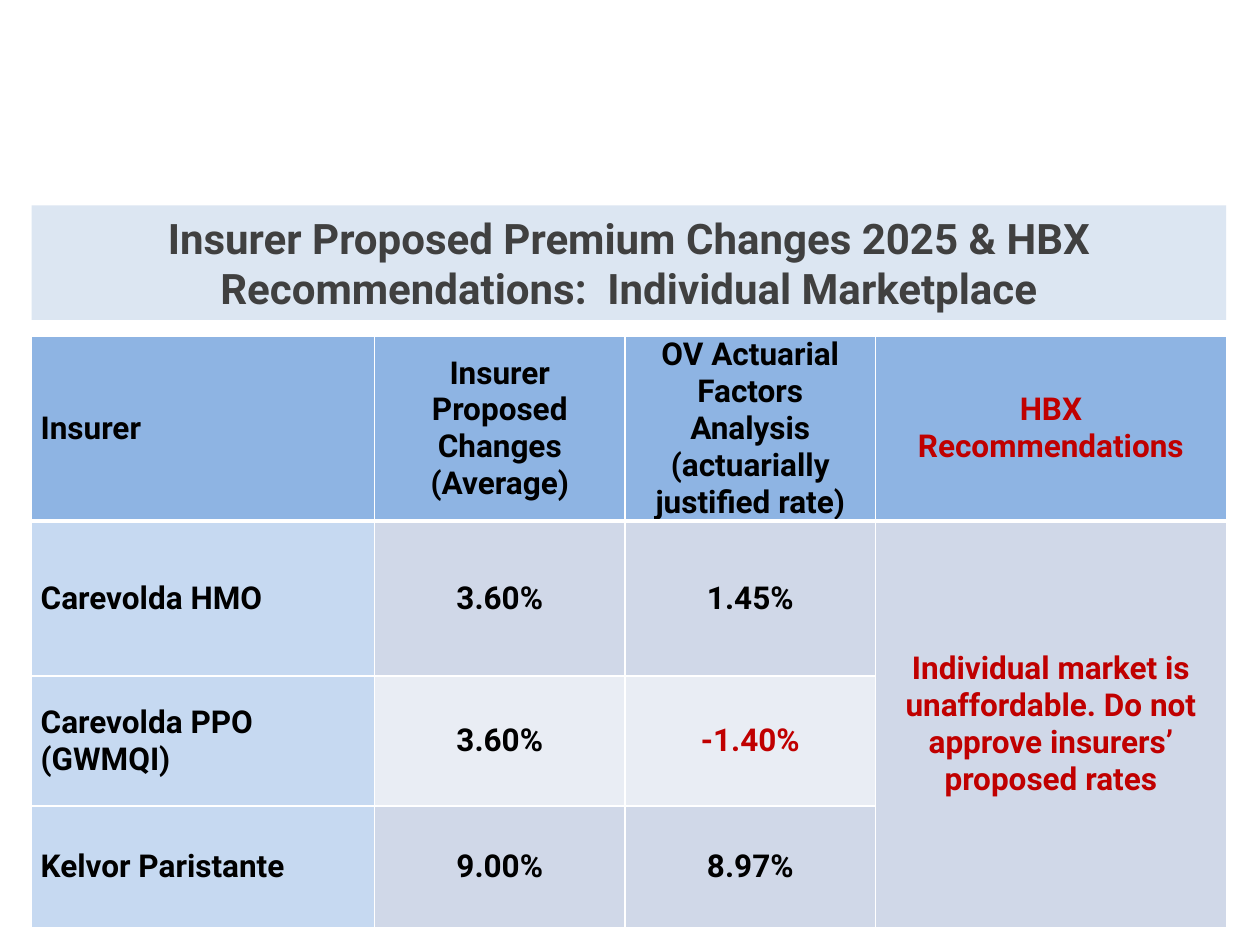
from dataclasses import dataclass

from lxml import etree
from pptx import Presentation
from pptx.dml.color import RGBColor
from pptx.enum.shapes import MSO_SHAPE
from pptx.enum.text import MSO_ANCHOR, PP_ALIGN
from pptx.oxml.ns import qn
from pptx.util import Cm, Pt

RECTANGLE = MSO_SHAPE.RECTANGLE
MIDDLE = MSO_ANCHOR.MIDDLE
LEFT, CENTER = PP_ALIGN.LEFT, PP_ALIGN.CENTER

BLACK = RGBColor(0x00, 0x00, 0x00)
WHITE = RGBColor(0xFF, 0xFF, 0xFF)
RED = RGBColor(0xC0, 0x00, 0x00)
TITLE_GRAY = RGBColor(0x40, 0x40, 0x40)
TITLE_FILL = RGBColor(0xDC, 0xE6, 0xF2)
HEADER_FILL = RGBColor(0x8E, 0xB4, 0xE3)
INSURER_FILL = RGBColor(0xC6, 0xD9, 0xF1)
BAND_DARK = RGBColor(0xD0, 0xD8, 0xE8)
BAND_LIGHT = RGBColor(0xE9, 0xED, 0xF4)

FONT = "Roboto"
MARGIN, CONTENT_WIDTH = Cm(0.64), Cm(24.08)
COLUMN_WIDTHS = [Cm(6.91), Cm(5.05), Cm(5.05), Cm(7.07)]
ROW_HEIGHTS = [Cm(3.12), Cm(3.12), Cm(2.62), Cm(2.46)]


@dataclass
class Entry:
    text: str
    color: RGBColor = BLACK
    spacing: int = 0


HEADERS = [
    Entry("Insurer"),
    Entry("Insurer Proposed Changes (Average)"),
    Entry("OV Actuarial Factors Analysis (actuarially justified rate)"),
    Entry("HBX Recommendations", RED),
]
RATES = [
    [Entry("Carevolda HMO", spacing=6), Entry("3.60%", spacing=6), Entry("1.45%"),
     Entry("Individual market is unaffordable. Do not approve insurers’ proposed rates", RED)],
    [Entry("Carevolda PPO (GWMQI)", spacing=6), Entry("3.60%", spacing=6),
     Entry("-1.40%", RED)],
    [Entry("Kelvor Paristante", spacing=6), Entry("9.00%"), Entry("8.97%")],
]


def add_text(paragraph, text: str, size: int, color: RGBColor, align) -> None:
    paragraph.alignment = align
    run = paragraph.add_run()
    run.text = text
    run.font.name = FONT
    run.font.size = Pt(size)
    run.font.bold = True
    run.font.color.rgb = color


def set_borders(cell, top: int, bottom: int) -> None:
    properties = cell._tc.get_or_add_tcPr()
    sides = [("a:lnL", 1), ("a:lnR", 1), ("a:lnT", top), ("a:lnB", bottom)]
    for position, (tag, width) in enumerate(sides):
        line = etree.Element(qn(tag), w=str(Pt(width)))
        fill = etree.SubElement(line, qn("a:solidFill"))
        etree.SubElement(fill, qn("a:srgbClr"), val=str(WHITE))
        properties.insert(position, line)


def fill_color(row: int, column: int) -> RGBColor:
    if row == 0:
        return HEADER_FILL
    if column == 0:
        return INSURER_FILL
    return BAND_DARK if row % 2 else BAND_LIGHT


def add_title(slide, text: str) -> None:
    title = slide.shapes.add_shape(RECTANGLE, MARGIN, Cm(4.14), CONTENT_WIDTH, Cm(2.31))
    title.shadow.inherit = False
    title.fill.solid()
    title.fill.fore_color.rgb = TITLE_FILL
    title.line.fill.background()
    frame = title.text_frame
    frame.word_wrap = True
    frame.vertical_anchor = MIDDLE
    add_text(frame.paragraphs[0], text, 24, TITLE_GRAY, CENTER)


def add_rate_table(slide, rows: list[list[Entry]]) -> None:
    table = slide.shapes.add_table(
        len(ROW_HEIGHTS), len(COLUMN_WIDTHS), MARGIN, Cm(6.78),
        CONTENT_WIDTH, sum(ROW_HEIGHTS)).table
    for column, width in zip(table.columns, COLUMN_WIDTHS):
        column.width = width
    for row, height in zip(table.rows, ROW_HEIGHTS):
        row.height = height

    # Fills, borders and margins of every cell
    for r in range(len(ROW_HEIGHTS)):
        for c in range(len(COLUMN_WIDTHS)):
            cell = table.cell(r, c)
            cell.fill.solid()
            cell.fill.fore_color.rgb = fill_color(r, c)
            set_borders(cell, top=3 if r == 1 else 1, bottom=3 if r == 0 else 1)
            cell.vertical_anchor = MIDDLE
            cell.margin_left = cell.margin_right = Cm(0.18)
            cell.margin_top = cell.margin_bottom = 0

    # One recommendation covers all insurers
    table.cell(1, 3).merge(table.cell(3, 3))

    for r, entries in enumerate(rows):
        for c, entry in enumerate(entries):
            paragraph = table.cell(r, c).text_frame.paragraphs[0]
            if entry.spacing:
                paragraph.space_after = Pt(entry.spacing)
            add_text(paragraph, entry.text, 18, entry.color, CENTER if c else LEFT)


def main() -> None:
    deck = Presentation()
    deck.slide_width, deck.slide_height = Cm(25.4), Cm(19.05)
    slide = deck.slides.add_slide(deck.slide_layouts[6])
    add_rate_table(slide, [HEADERS, *RATES])
    add_title(slide, "Insurer Proposed Premium Changes 2025 & HBX "
                     "Recommendations:  Individual Marketplace")
    deck.save("out.pptx")


if __name__ == "__main__":
    main()
